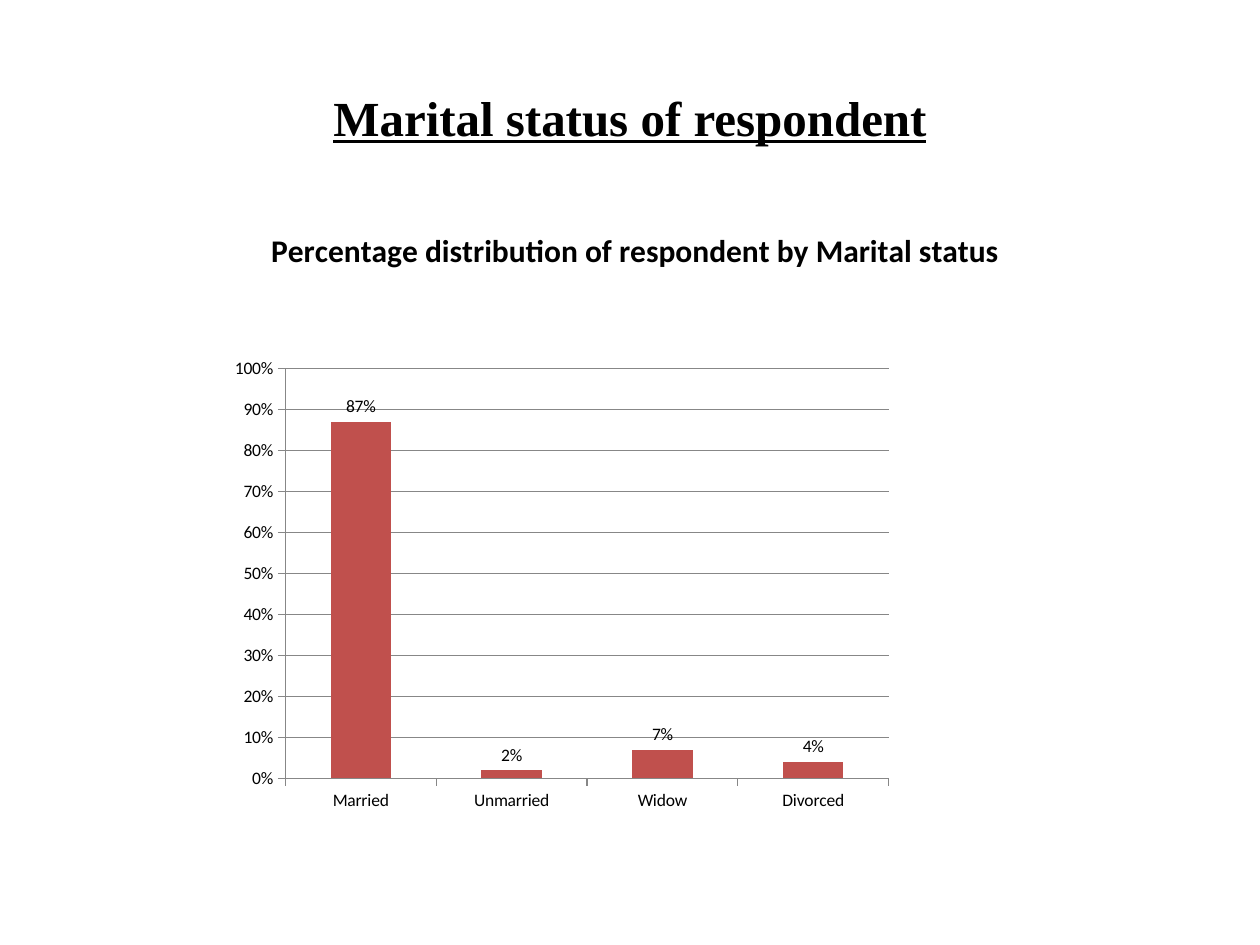
from typing import NamedTuple

from lxml.etree import SubElement
from pptx import Presentation
from pptx.chart.data import CategoryChartData
from pptx.dml.color import RGBColor
from pptx.enum.chart import XL_CHART_TYPE, XL_LABEL_POSITION, XL_TICK_MARK
from pptx.enum.text import MSO_ANCHOR, PP_ALIGN
from pptx.oxml.ns import qn
from pptx.util import Emu, Pt

BLACK = RGBColor(0x00, 0x00, 0x00)
RED = RGBColor(0xC0, 0x50, 0x4D)
GREY = RGBColor(0x87, 0x87, 0x87)
SCALE = 914400 / 126


class Box(NamedTuple):
    left: int
    top: int
    width: int
    height: int


class Status(NamedTuple):
    name: str
    share: float


STATUSES = [
    Status("Married", 0.87),
    Status("Unmarried", 0.02),
    Status("Widow", 0.07),
    Status("Divorced", 0.04),
]


def px(count: int) -> Emu:
    return Emu(round(count * SCALE))


def style(font, *, size: int, face: str = "Calibri", bold: bool = False,
          underline: bool = False) -> None:
    font.size = Pt(size)
    font.name = face
    font.bold = bold
    font.underline = underline
    font.color.rgb = BLACK


def add_text(slide, box: Box, text: str, **look) -> None:
    frame = slide.shapes.add_textbox(*map(px, box)).text_frame
    frame.word_wrap = True
    frame.vertical_anchor = MSO_ANCHOR.MIDDLE
    line = frame.paragraphs[0]
    line.alignment = PP_ALIGN.CENTER
    run = line.add_run()
    run.text = text
    style(run.font, **look)


def place(parent, **parts) -> None:
    layout = parent.find(qn("c:layout"))
    if layout is None:
        layout = parent.makeelement(qn("c:layout"))
        parent.insert(1 if parent.tag == qn("c:title") else 0, layout)
    manual = SubElement(layout, qn("c:manualLayout"))
    for tag, value in parts.items():
        SubElement(manual, qn(f"c:{tag}")).set("val", str(value))


def style_axis(axis) -> None:
    axis.major_tick_mark = XL_TICK_MARK.OUTSIDE
    axis.minor_tick_mark = XL_TICK_MARK.NONE
    style(axis.tick_labels.font, size=10)
    axis.format.line.color.rgb = GREY
    axis.format.line.width = Pt(0.75)


def add_bars(slide, box: Box, title: str, rows: list[Status]) -> None:
    data = CategoryChartData(number_format="0%")
    data.categories = [row.name for row in rows]
    data.add_series("Series 1", [row.share for row in rows])
    chart = slide.shapes.add_chart(
        XL_CHART_TYPE.COLUMN_CLUSTERED, *map(px, box), data).chart
    style(chart.font, size=10)
    chart.has_legend = False

    chart.has_title = True
    line = chart.chart_title.text_frame.paragraphs[0]
    run = line.add_run()
    run.text = title
    style(run.font, size=18, bold=True)
    heading = chart.chart_title._element
    place(heading, xMode="edge", yMode="edge", x=0.19, y=0.05)
    area = heading.getparent().find(qn("c:plotArea"))
    place(area, layoutTarget="inner", xMode="edge", yMode="edge",
          x=0.207, y=0.267, w=0.513, h=0.61)

    style_axis(chart.category_axis)
    scale = chart.value_axis
    style_axis(scale)
    scale.minimum_scale, scale.maximum_scale, scale.major_unit = 0, 1, 0.1
    scale.tick_labels.number_format = "0%"
    scale.tick_labels.number_format_is_linked = False
    scale.has_major_gridlines = True
    scale.major_gridlines.format.line.color.rgb = GREY
    scale.major_gridlines.format.line.width = Pt(0.75)

    plot = chart.plots[0]
    plot.gap_width = 150
    plot.vary_by_categories = False
    bars = plot.series[0]
    bars.format.fill.solid()
    bars.format.fill.fore_color.rgb = RED
    labels = bars.data_labels
    labels.show_value = True
    labels.position = XL_LABEL_POSITION.OUTSIDE_END
    labels.number_format = "0%"
    labels.number_format_is_linked = False
    style(labels.font, size=10)


def main() -> None:
    deck = Presentation()
    deck.slide_width, deck.slide_height = px(1260), px(945)
    slide = deck.slides.add_slide(deck.slide_layouts[6])
    add_text(slide, Box(63, 38, 1134, 157), "Marital status of respondent",
             size=28, face="Times New Roman", bold=True, underline=True)
    add_bars(slide, Box(42, 189, 1176, 672),
             "Percentage distribution of respondent by Marital status", STATUSES)
    deck.save("out.pptx")


if __name__ == "__main__":
    main()
